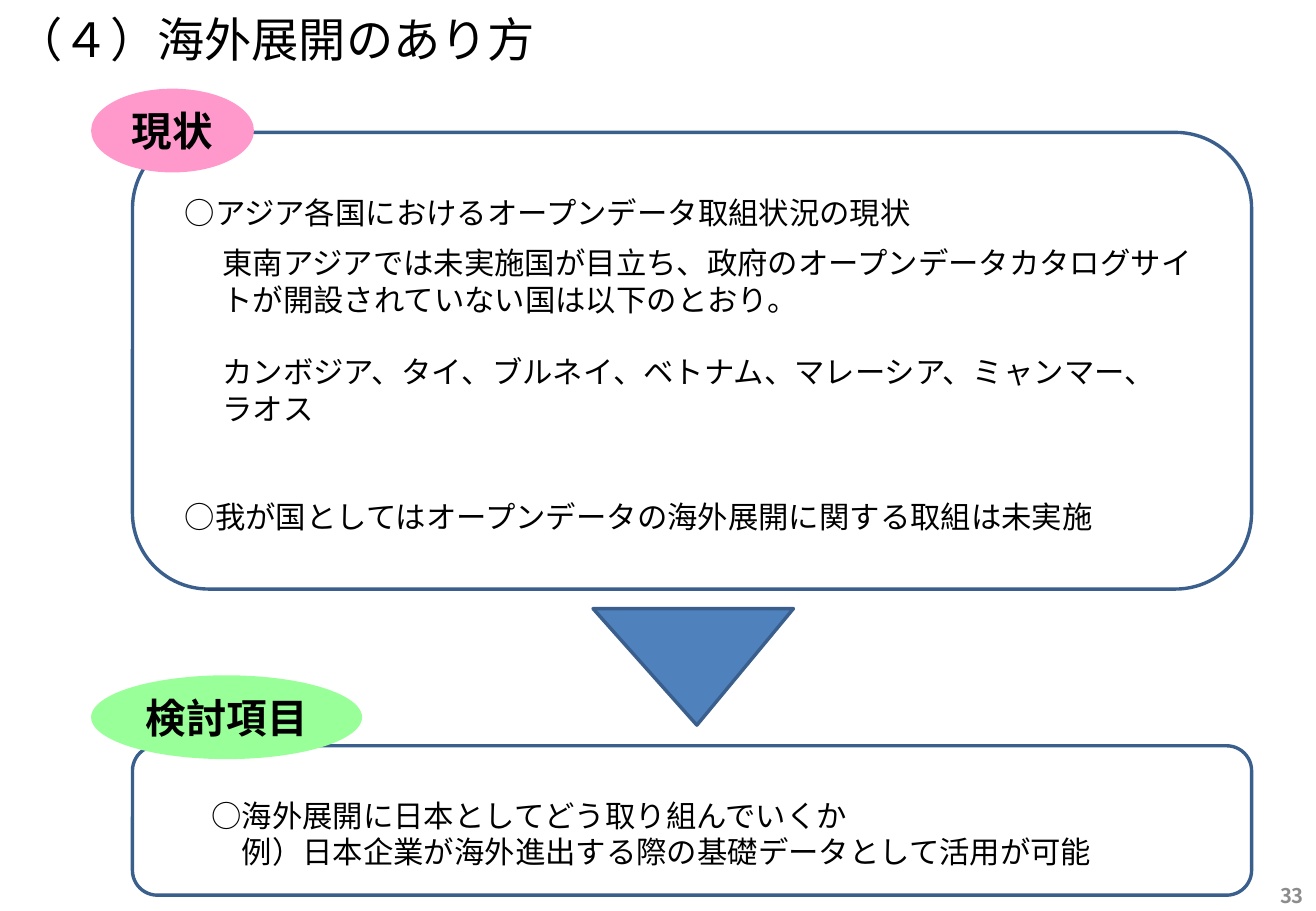
from pptx import Presentation
from pptx.dml.color import RGBColor
from pptx.enum.shapes import MSO_SHAPE
from pptx.enum.text import MSO_ANCHOR, MSO_AUTO_SIZE, PP_ALIGN
from pptx.oxml.ns import qn
from pptx.util import Inches, Pt
from lxml.etree import SubElement

FONT = "Noto Sans CJK JP"
BLACK = RGBColor(0x00, 0x00, 0x00)
WHITE = RGBColor(0xFF, 0xFF, 0xFF)
GRAY = RGBColor(0x8C, 0x8C, 0x8C)
PINK = RGBColor(0xFF, 0x99, 0xCC)
GREEN = RGBColor(0x99, 0xFF, 0x99)
BLUE = RGBColor(0x4F, 0x81, 0xBD)
OUTLINE = RGBColor(0x3A, 0x5F, 0x8C)

LINE_PITCH = Pt(21.6)

# Text, left indent in inches, space before in points
STATUS = [
    ("○アジア各国におけるオープンデータ取組状況の現状", 0, 0),
    ("東南アジアでは未実施国が目立ち、政府のオープンデータカタログサイトが"
     "開設されていない国は以下のとおり。", 0.31, 8),
    ("カンボジア、タイ、ブルネイ、ベトナム、マレーシア、ミャンマー、", 0.31, 21.6),
    ("ラオス", 0.31, 0),
    ("○我が国としてはオープンデータの海外展開に関する取組は未実施", 0, 42.5),
]
AGENDA = [
    ("○海外展開に日本としてどう取り組んでいくか", 0, 0),
    ("例）日本企業が海外進出する際の基礎データとして活用が可能", 0.25, 0),
]


def place(shape, left, top, width, height):
    shape.left, shape.top = Inches(left), Inches(top)
    shape.width, shape.height = Inches(width), Inches(height)


def format_paragraph(paragraph, size, color=BLACK, bold=False, align=PP_ALIGN.LEFT):
    paragraph.alignment = align
    font = paragraph.font
    font.name, font.size, font.bold = FONT, Pt(size), bold
    font.color.rgb = color
    properties = paragraph._p.get_or_add_pPr()
    SubElement(properties.find(qn("a:defRPr")), qn("a:ea"), typeface=FONT)


def write_line(shape, text, size, anchor=MSO_ANCHOR.MIDDLE, **style):
    frame = shape.text_frame
    frame.word_wrap = True
    frame.auto_size = MSO_AUTO_SIZE.NONE
    frame.vertical_anchor = anchor
    frame.text = text
    format_paragraph(frame.paragraphs[0], size, **style)


def write_list(shape, items):
    frame = shape.text_frame
    frame.word_wrap = True
    frame.auto_size = MSO_AUTO_SIZE.NONE
    frame.vertical_anchor = MSO_ANCHOR.TOP
    frame.text = "\n".join(text for text, _, _ in items)
    for paragraph, (_, indent, before) in zip(frame.paragraphs, items):
        paragraph.line_spacing = LINE_PITCH
        paragraph.space_before, paragraph.space_after = Pt(before), Pt(0)
        properties = paragraph._p.get_or_add_pPr()
        properties.set("marL", str(Inches(indent)))
        properties.set("indent", "0")
        SubElement(properties, qn("a:buNone"))
        format_paragraph(paragraph, 18)


def add_filled(slide, kind, box, fill, line=None):
    shape = slide.shapes.add_shape(kind, *map(Inches, box))
    shape.shadow.inherit = False
    shape.fill.solid()
    shape.fill.fore_color.rgb = fill
    if line is None:
        shape.line.fill.background()
    else:
        shape.line.color.rgb = line
        shape.line.width = Pt(2)
    return shape


def add_panel(slide, top, height):
    panel = add_filled(slide, MSO_SHAPE.ROUNDED_RECTANGLE,
                       (1.09, top, 9.21, height), WHITE, OUTLINE)
    # Send behind the placeholders
    slide.shapes._spTree.insert(2, panel._element)


def add_label(slide, text, top, width, fill):
    label = add_filled(slide, MSO_SHAPE.OVAL, (0.75, top, width, 0.69), fill)
    label.text_frame.margin_left = label.text_frame.margin_right = 0
    write_line(label, text, 24, bold=True, align=PP_ALIGN.CENTER)


def main():
    deck = Presentation()
    deck.slide_width, deck.slide_height = Inches(10.83), Inches(7.5)
    slide = deck.slides.add_slide(deck.slide_layouts[1])

    # Heading
    heading = slide.shapes.title
    place(heading, 0.03, 0.03, 9.69, 0.57)
    write_line(heading, "（４）海外展開のあり方", 28)

    # Current status
    add_panel(slide, 1.09, 3.76)
    add_label(slide, "現状", 0.73, 1.34, PINK)
    status = slide.placeholders[1]
    place(status, 1.42, 1.55, 8.73, 2.9)
    write_list(status, STATUS)

    # Arrow from status to agenda
    arrow = add_filled(slide, MSO_SHAPE.ISOSCELES_TRIANGLE,
                       (4.88, 5.01, 1.65, 0.96), BLUE, OUTLINE)
    arrow.adjustments[0] = 0.482
    arrow.rotation = 180

    # Items to consider
    add_panel(slide, 6.14, 1.23)
    add_label(slide, "検討項目", 5.56, 2.23, GREEN)
    agenda = slide.shapes.add_textbox(*map(Inches, (1.64, 6.51, 8.65, 0.71)))
    write_list(agenda, AGENDA)

    # Page number
    page_number = slide.shapes.add_textbox(*map(Inches, (8.3, 7.24, 2.53, 0.26)))
    write_line(page_number, "33", 12, color=GRAY, bold=True, align=PP_ALIGN.RIGHT)

    deck.save("out.pptx")


if __name__ == "__main__":
    main()
